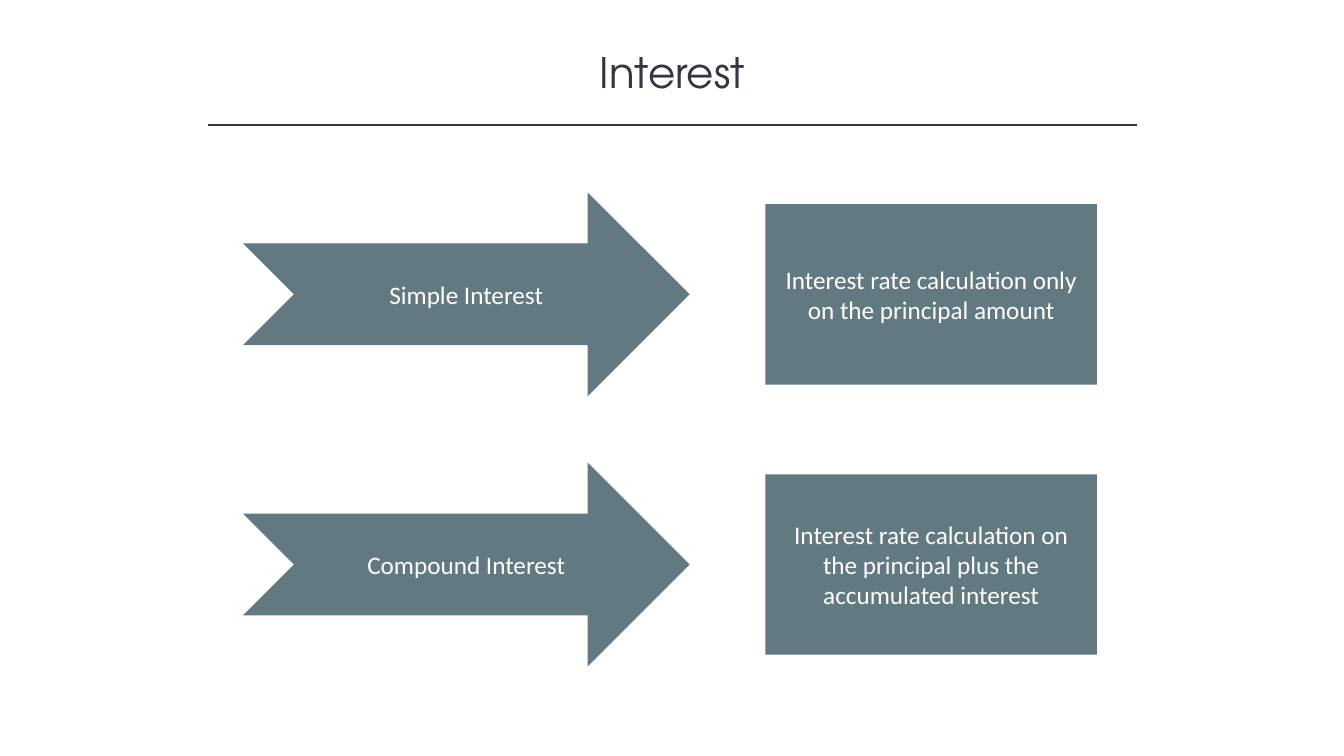
from dataclasses import dataclass

import pptx
import pptx.dml.color
import pptx.enum.shapes
import pptx.enum.text
import pptx.oxml.ns
import pptx.shapes.autoshape
import pptx.slide
import pptx.text.text
import pptx.util
from lxml import etree

Inches = pptx.util.Inches
Shape = pptx.enum.shapes.MSO_SHAPE
Anchor = pptx.enum.text.MSO_ANCHOR


@dataclass(frozen=True)
class Theme:
    ink: str = "323542"
    fill: str = "627981"
    light: str = "FFFFFF"
    head: str = "TeX Gyre Adventor"
    body: str = "Calibri"
    large: int = 30
    small: int = 18
    rule: int = 1


@dataclass(frozen=True)
class Term:
    name: str
    meaning: str


THEME = Theme()
TERMS = [
    Term("Simple Interest", "Interest rate calculation only on the principal amount"),
    Term("Compound Interest",
         "Interest rate calculation on the principal plus the accumulated interest"),
]
MIDDLE = 2.92
PITCH = 2.68


def color(code: str) -> pptx.dml.color.RGBColor:
    return pptx.dml.color.RGBColor.from_string(code)


def write(frame: pptx.text.text.TextFrame, text: str, *, font: str = THEME.body,
          size: int = THEME.small, ink: str = THEME.light,
          anchor: Anchor = Anchor.MIDDLE) -> None:
    frame.word_wrap = True
    frame.vertical_anchor = anchor
    para = frame.paragraphs[0]
    para.alignment = pptx.enum.text.PP_ALIGN.CENTER
    run = para.add_run()
    run.text = text
    run.font.name = font
    run.font.size = pptx.util.Pt(size)
    run.font.color.rgb = color(ink)


def block(slide: pptx.slide.Slide, kind: Shape, text: str, left: float,
          middle: float, width: float, height: float) -> None:
    shape = slide.shapes.add_shape(
        kind, Inches(left), Inches(middle - height / 2), Inches(width), Inches(height))
    shape.shadow.inherit = False
    shape.fill.solid()
    shape.fill.fore_color.rgb = color(THEME.fill)
    shape.line.fill.background()
    write(shape.text_frame, text)


def title(slide: pptx.slide.Slide, text: str) -> None:
    box = slide.shapes.add_textbox(Inches(1.67), Inches(0.41), Inches(10), Inches(0.61))
    box.text_frame.auto_size = pptx.enum.text.MSO_AUTO_SIZE.SHAPE_TO_FIT_TEXT
    write(box.text_frame, text, font=THEME.head, size=THEME.large,
          ink=THEME.ink, anchor=Anchor.TOP)
    rule = slide.shapes.add_connector(
        pptx.enum.shapes.MSO_CONNECTOR.STRAIGHT,
        Inches(2.06), Inches(1.24), Inches(11.28), Inches(1.24))
    rule.line.color.rgb = color(THEME.ink)
    rule.line.width = pptx.util.Pt(THEME.rule)
    etree.SubElement(rule._element.spPr, pptx.oxml.ns.qn("a:effectLst"))


def main() -> None:
    deck = pptx.Presentation()
    deck.slide_width = Inches(13.33)
    deck.slide_height = Inches(7.5)
    slide = deck.slides.add_slide(deck.slide_layouts[6])
    title(slide, "Interest")
    for row, term in enumerate(TERMS):
        middle = MIDDLE + row * PITCH
        block(slide, Shape.NOTCHED_RIGHT_ARROW, term.name, 2.41, middle, 4.43, 2.02)
        block(slide, Shape.RECTANGLE, term.meaning, 7.59, middle, 3.29, 1.79)
    deck.save("out.pptx")


if __name__ == "__main__":
    main()
